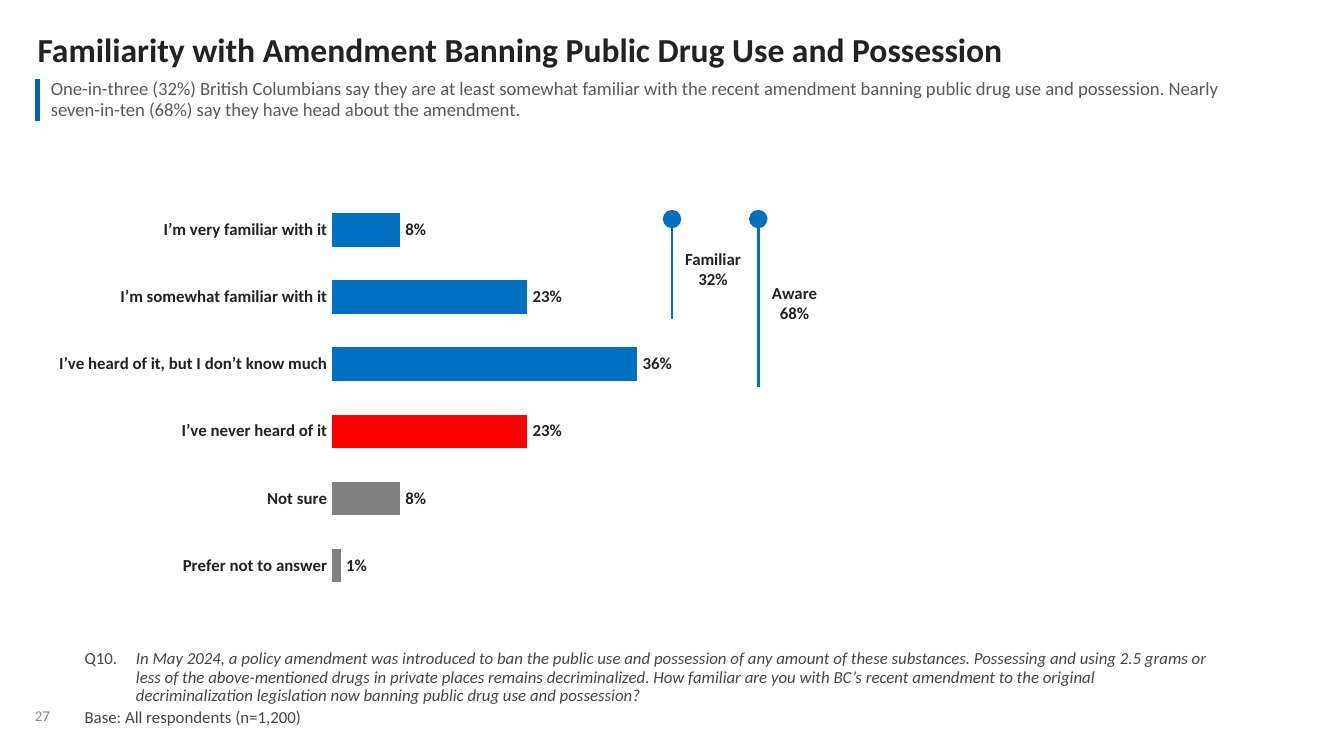
from dataclasses import dataclass

from lxml import etree
from pptx import Presentation
from pptx.chart.data import CategoryChartData
from pptx.dml.color import RGBColor
from pptx.enum.chart import XL_CHART_TYPE, XL_LABEL_POSITION, XL_TICK_LABEL_POSITION, XL_TICK_MARK
from pptx.enum.shapes import MSO_CONNECTOR
from pptx.enum.text import MSO_ANCHOR, PP_ALIGN
from pptx.oxml import parse_xml
from pptx.oxml.ns import nsdecls, qn
from pptx.util import Cm, Pt

BAR = XL_CHART_TYPE.BAR_CLUSTERED
OUTSIDE_END = XL_LABEL_POSITION.OUTSIDE_END
NO_LABELS = XL_TICK_LABEL_POSITION.NONE
NO_TICKS = XL_TICK_MARK.NONE
STRAIGHT = MSO_CONNECTOR.STRAIGHT
TOP, MIDDLE, BOTTOM = MSO_ANCHOR.TOP, MSO_ANCHOR.MIDDLE, MSO_ANCHOR.BOTTOM
LEFT, CENTER = PP_ALIGN.LEFT, PP_ALIGN.CENTER


@dataclass(frozen=True)
class Theme:
    font: str = "Calibri"
    ink: str = "222223"
    lead: str = "58595B"
    note: str = "444647"
    page: str = "888B8D"
    rule: str = "0161AB"
    blue: str = "0070C0"
    red: str = "FF0000"
    grey: str = "808080"
    title_size: float = 18
    lead_size: float = 10
    body_size: float = 9
    page_size: float = 8


THEME = Theme()

RESPONSES = [
    ("I’m very familiar with it", 0.08, THEME.blue),
    ("I’m somewhat familiar with it", 0.23, THEME.blue),
    ("I’ve heard of it, but I don’t know much", 0.36, THEME.blue),
    ("I’ve never heard of it", 0.23, THEME.red),
    ("Not sure", 0.08, THEME.grey),
    ("Prefer not to answer", 0.01, THEME.grey),
]
SUMMARIES = [
    ("Familiar", "32%", (12.7, 4.14, 1.55, 1.9)),
    ("Aware", "68%", (14.33, 4.14, 1.37, 3.18)),
]
TITLE = "Familiarity with Amendment Banning Public Drug Use and Possession"
LEAD = (
    "One-in-three (32%) British Columbians say they are at least somewhat familiar with the recent "
    "amendment banning public drug use and possession. Nearly seven-in-ten (68%) say they have head "
    "about the amendment."
)
QUESTION = (
    "In May 2024, a policy amendment was introduced to ban the public use and possession of any amount "
    "of these substances. Possessing and using 2.5 grams or less of the above-mentioned drugs in private "
    "places remains decriminalized. How familiar are you with BC’s recent amendment to the original "
    "decriminalization legislation now banning public drug use and possession?"
)
BASE = "Base: All respondents (n=1,200)"


def apply_format(target, values):
    for name, value in values.items():
        setattr(target, name, value)


def style_font(font, size, color, bold=False, italic=False):
    apply_format(font, {"name": THEME.font, "size": Pt(size), "bold": bold, "italic": italic})
    font.color.rgb = RGBColor.from_string(color)


def add_run(paragraph, text, size, color, **emphasis):
    run = paragraph.add_run()
    run.text = text
    style_font(run.font, size, color, **emphasis)


def add_frame(slide, box, anchor=TOP, wrap=True, inset=0):
    frame = slide.shapes.add_textbox(*map(Cm, box)).text_frame
    margins = {f"margin_{side}": Cm(inset) for side in ("left", "top", "right", "bottom")}
    apply_format(frame, {"word_wrap": wrap, "vertical_anchor": anchor, **margins})
    return frame


def add_line_of_text(slide, box, text, size, color, spacing, bold=False, **frame_format):
    paragraph = add_frame(slide, box, **frame_format).paragraphs[0]
    apply_format(paragraph, {"alignment": LEFT, "line_spacing": spacing})
    add_run(paragraph, text, size, color, bold=bold)


def add_lead(slide, box):
    table = slide.shapes.add_table(1, 1, *map(Cm, box)).table
    apply_format(table, {"first_row": False, "horz_banding": False})
    cell = table.cell(0, 0)
    cell.fill.background()
    apply_format(cell, {
        "vertical_anchor": MIDDLE, "margin_left": Cm(0.25), "margin_right": Cm(0.25),
        "margin_top": 0, "margin_bottom": 0,
    })
    border = parse_xml(
        f'<a:lnL {nsdecls("a")} w="{Pt(3)}"><a:solidFill><a:srgbClr val="{THEME.rule}"/>'
        "</a:solidFill></a:lnL>"
    )
    cell._tc.get_or_add_tcPr().insert(0, border)
    paragraph = cell.text_frame.paragraphs[0]
    apply_format(paragraph, {"line_spacing": 0.9, "space_after": Pt(3)})
    add_run(paragraph, LEAD, THEME.lead_size, THEME.lead)


def add_response_chart(slide, box):
    labels, shares, colors = zip(*RESPONSES)
    data = CategoryChartData(number_format="0%")
    data.categories = labels
    data.add_series("Series 1", shares)
    chart = slide.shapes.add_chart(BAR, *map(Cm, box), data).chart
    apply_format(chart, {"has_legend": False, "has_title": False})
    style_font(chart.font, THEME.body_size, THEME.ink, bold=True)

    tick_format = {"major_tick_mark": NO_TICKS, "minor_tick_mark": NO_TICKS, "has_major_gridlines": False}
    for axis in (chart.category_axis, chart.value_axis):
        apply_format(axis, tick_format)
        axis.format.line.fill.background()
    chart.category_axis.reverse_order = True
    apply_format(chart.value_axis, {
        "minimum_scale": 0, "maximum_scale": 1, "major_unit": 0.2, "tick_label_position": NO_LABELS,
    })

    plot = chart.plots[0]
    apply_format(plot, {"gap_width": 100, "vary_by_categories": False, "has_data_labels": True})
    apply_format(plot.data_labels, {
        "show_value": True, "number_format": "0%", "number_format_is_linked": False,
        "position": OUTSIDE_END,
    })
    style_font(plot.data_labels.font, THEME.body_size, THEME.ink, bold=True)
    for index, color in enumerate(colors):
        fill = plot.series[0].points[index].format.fill
        fill.solid()
        fill.fore_color.rgb = RGBColor.from_string(color)
    set_plot_layout(chart, {"x": 0.258, "y": 0, "w": 0.742, "h": 1})


def set_plot_layout(chart, fractions):
    plot_area = chart._chartSpace.chart.plotArea
    for previous in plot_area.findall(qn("c:layout")):
        plot_area.remove(previous)
    layout = etree.Element(qn("c:layout"))
    manual = etree.SubElement(layout, qn("c:manualLayout"))
    settings = {"layoutTarget": "inner", "xMode": "edge", "yMode": "edge", **fractions}
    for name, value in settings.items():
        etree.SubElement(manual, qn(f"c:{name}"), val=str(value))
    plot_area.insert(0, layout)


def add_summary(slide, box, name, share):
    left, top, width, height = box
    marker = slide.shapes.add_connector(STRAIGHT, Cm(left), Cm(top), Cm(left), Cm(top + height))
    marker.line.width = Pt(1.5)
    marker.line.color.rgb = RGBColor.from_string(THEME.blue)
    etree.SubElement(marker.line._get_or_add_ln(), qn("a:headEnd"), type="oval", w="lg", len="lg")
    etree.SubElement(marker._element.spPr, qn("a:effectLst"))

    gap, label_height = 0.19, 0.88
    label_box = (left + gap, top + (height - label_height) / 2, width - 2 * gap, label_height)
    frame = add_frame(slide, label_box, wrap=False, inset=0.05)
    for paragraph, text in zip((frame.paragraphs[0], frame.add_paragraph()), (name, share)):
        paragraph.alignment = CENTER
        add_run(paragraph, text, THEME.body_size, THEME.ink, bold=True)


def add_question(slide, box):
    frame = add_frame(slide, box, anchor=BOTTOM)
    question, base = frame.paragraphs[0], frame.add_paragraph()
    for paragraph in (question, base):
        properties = paragraph._p.get_or_add_pPr()
        properties.set("marL", str(Cm(0.97)))
        properties.set("indent", str(Cm(-0.97)))
        apply_format(paragraph, {"line_spacing": 0.9, "space_after": Pt(2)})
    add_run(question, "Q10.\t", THEME.body_size, THEME.note)
    add_run(question, QUESTION, THEME.body_size, THEME.note, italic=True)
    add_run(base, BASE, THEME.body_size, THEME.note)


def main():
    presentation = Presentation()
    apply_format(presentation, {"slide_width": Cm(25.4), "slide_height": Cm(14.29)})
    slide = presentation.slides.add_slide(presentation.slide_layouts[6])
    add_line_of_text(slide, (0.66, 13.03, 0.86, 0.66), "27", THEME.page_size, THEME.page, 0.85,
                     anchor=BOTTOM, wrap=False)
    add_line_of_text(slide, (0.71, 0.64, 24.03, 0.69), TITLE, THEME.title_size, THEME.ink, 0.9, bold=True)
    add_lead(slide, (0.71, 1.5, 22.86, 0.76))
    add_response_chart(slide, (0.71, 3.71, 21.59, 7.62))
    for name, share, box in SUMMARIES:
        add_summary(slide, box, name, share)
    add_question(slide, (1.6, 12.95, 21.34, 0.79))
    presentation.save("out.pptx")


if __name__ == "__main__":
    main()
